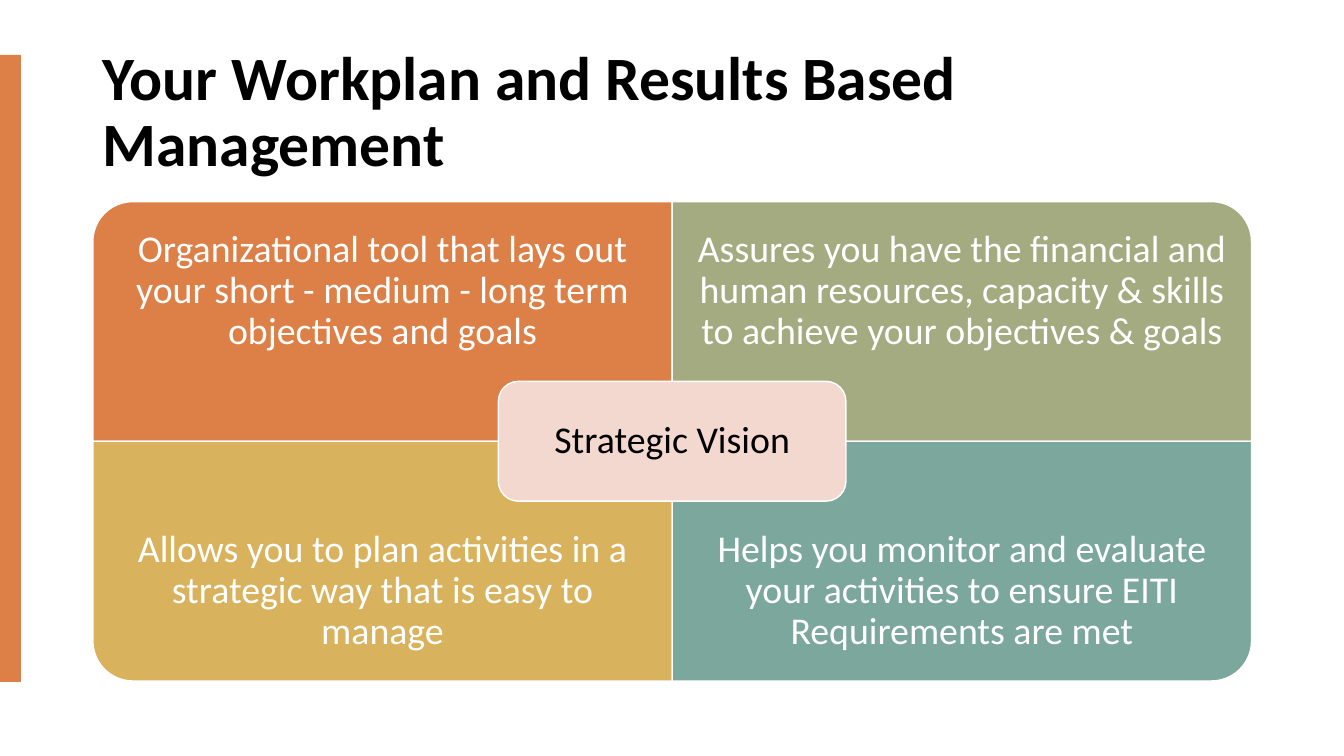
from dataclasses import dataclass

from pptx import Presentation
from pptx.dml.color import RGBColor
from pptx.enum.shapes import MSO_SHAPE as Preset
from pptx.enum.text import MSO_ANCHOR as Anchor, MSO_AUTO_SIZE as AutoSize, PP_ALIGN as Align
from pptx.util import Cm, Pt

COLORS = {
    "orange": "DD8047",
    "green": "A5AB81",
    "yellow": "D8B25C",
    "teal": "7BA79D",
    "pink": "F2D8CF",
    "white": "FFFFFF",
    "black": "000000",
}
FONT = "Calibri"
MATRIX_LEFT, MATRIX_TOP = 2.34, 5.08
CELL_WIDTH, CELL_HEIGHT = 14.6, 6.04
TEXT_HEIGHT = CELL_HEIGHT * 0.75
VISION_WIDTH, VISION_HEIGHT = CELL_WIDTH * 0.6, CELL_HEIGHT * 0.5
VISION_MARGIN = 0.15


@dataclass(frozen=True)
class Box:
    left: float
    top: float
    width: float
    height: float


@dataclass(frozen=True)
class Quadrant:
    text: str
    color: str
    column: int
    row: int
    rotation: int


QUADRANTS = [
    Quadrant("Organizational tool that lays out your short - medium - long term objectives and goals",
             "orange", 0, 0, 270),
    Quadrant("Assures you have the financial and human resources, capacity & skills "
             "to achieve your objectives & goals", "green", 1, 0, 0),
    Quadrant("Allows you to plan activities in a strategic way that is easy to manage",
             "yellow", 0, 1, 180),
    Quadrant("Helps you monitor and evaluate your activities to ensure EITI Requirements are met",
             "teal", 1, 1, 90),
]


def rgb(name: str) -> RGBColor:
    return RGBColor.from_string(COLORS[name])


def place(shape, box: Box) -> None:
    shape.left, shape.top = Cm(box.left), Cm(box.top)
    shape.width, shape.height = Cm(box.width), Cm(box.height)


def write_text(shape, text: str, *, size: float = 27, color: str = "white", bold: bool = False,
               align: Align = Align.CENTER, inset: float = 0.53) -> None:
    frame = shape.text_frame
    frame.word_wrap = True
    frame.auto_size = AutoSize.NONE
    frame.vertical_anchor = Anchor.MIDDLE
    frame.margin_left = frame.margin_right = Cm(inset)
    frame.margin_top = frame.margin_bottom = Cm(inset)
    paragraph = frame.paragraphs[0]
    paragraph.alignment = align
    paragraph.line_spacing = 0.9
    run = paragraph.add_run()
    run.text = text
    run.font.name = FONT
    run.font.size = Pt(size)
    run.font.bold = bold
    run.font.color.rgb = rgb(color)


def add_text(slide, box: Box, text: str, **text_format) -> None:
    shape = slide.shapes.add_textbox(0, 0, 0, 0)
    place(shape, box)
    write_text(shape, text, **text_format)


def add_block(slide, preset: Preset, box: Box, color: str, rotation: int = 0,
              outlined: bool = True) -> None:
    if rotation % 180:
        center_x, center_y = box.left + box.width / 2, box.top + box.height / 2
        box = Box(center_x - box.height / 2, center_y - box.width / 2, box.height, box.width)
    shape = slide.shapes.add_shape(preset, 0, 0, 0, 0)
    place(shape, box)
    shape.rotation = rotation
    shape.shadow.inherit = False
    shape.fill.solid()
    shape.fill.fore_color.rgb = rgb(color)
    if outlined:
        shape.line.color.rgb = rgb("white")
        shape.line.width = Pt(1)
    else:
        shape.line.fill.background()


def add_quadrant(slide, quadrant: Quadrant) -> None:
    left = MATRIX_LEFT + quadrant.column * CELL_WIDTH
    top = MATRIX_TOP + quadrant.row * CELL_HEIGHT
    add_block(slide, Preset.ROUND_1_RECTANGLE, Box(left, top, CELL_WIDTH, CELL_HEIGHT),
              quadrant.color, quadrant.rotation)
    text_top = top + quadrant.row * (CELL_HEIGHT - TEXT_HEIGHT)
    add_text(slide, Box(left, text_top, CELL_WIDTH, TEXT_HEIGHT), quadrant.text)


def add_vision(slide) -> None:
    left = MATRIX_LEFT + CELL_WIDTH - VISION_WIDTH / 2
    top = MATRIX_TOP + CELL_HEIGHT - VISION_HEIGHT / 2
    add_block(slide, Preset.ROUNDED_RECTANGLE, Box(left, top, VISION_WIDTH, VISION_HEIGHT), "pink")
    text_box = Box(left + VISION_MARGIN, top + VISION_MARGIN,
                   VISION_WIDTH - 2 * VISION_MARGIN, VISION_HEIGHT - 2 * VISION_MARGIN)
    add_text(slide, text_box, "Strategic Vision", color="black", inset=0.28)


def main() -> None:
    presentation = Presentation()
    presentation.slide_width, presentation.slide_height = Cm(33.87), Cm(19.05)
    slide = presentation.slides.add_slide(presentation.slide_layouts[5])

    add_block(slide, Preset.RECTANGLE, Box(0, 1.38, 0.53, 15.8), "orange", 270, outlined=False)
    title = slide.shapes.title
    place(title, Box(MATRIX_LEFT, 1.02, 2 * CELL_WIDTH, 3.68))
    write_text(title, "Your Workplan and Results Based Management", size=44, color="black",
               bold=True, align=Align.LEFT, inset=0.25)

    for quadrant in QUADRANTS:
        add_quadrant(slide, quadrant)
    add_vision(slide)

    presentation.save("out.pptx")


if __name__ == "__main__":
    main()
